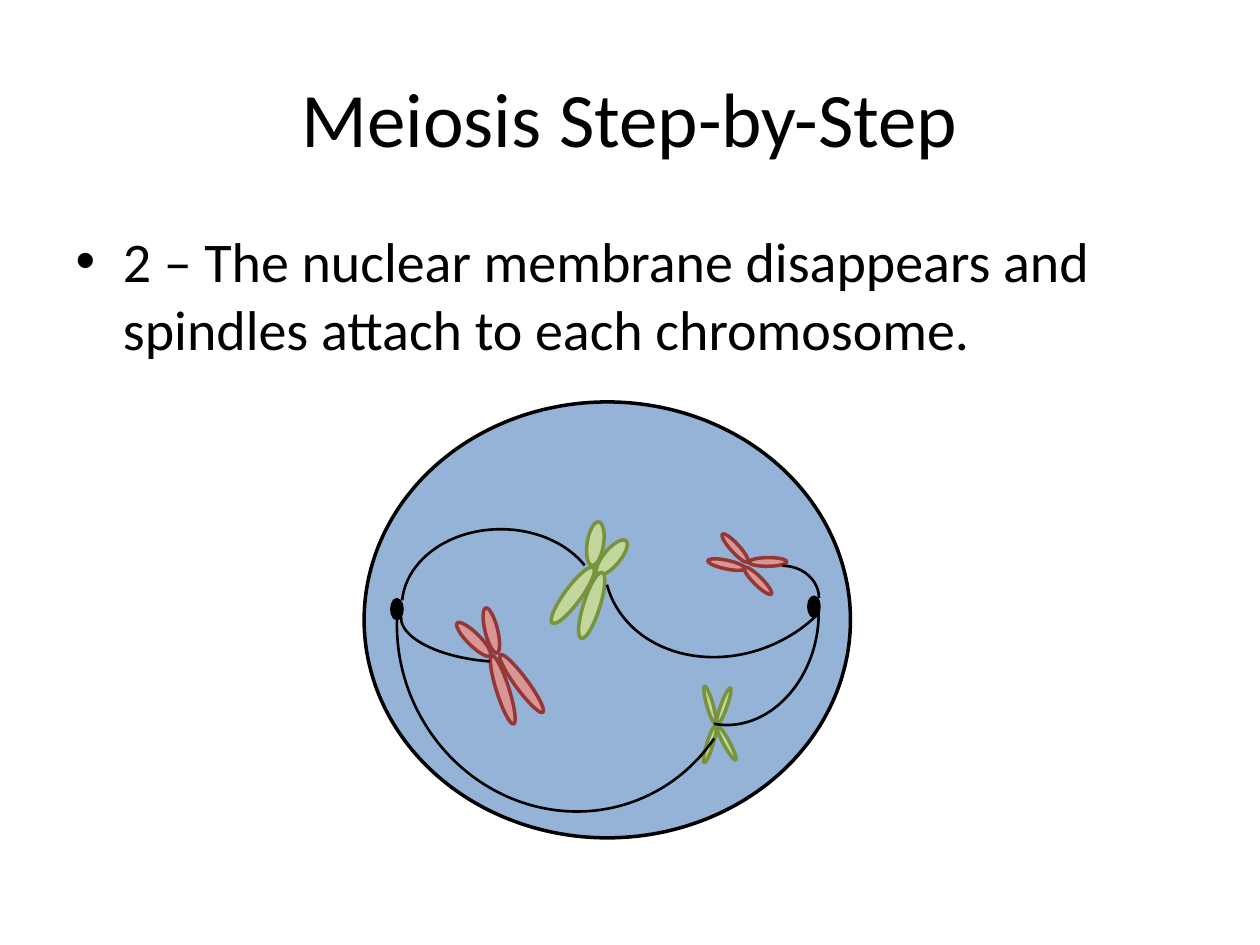
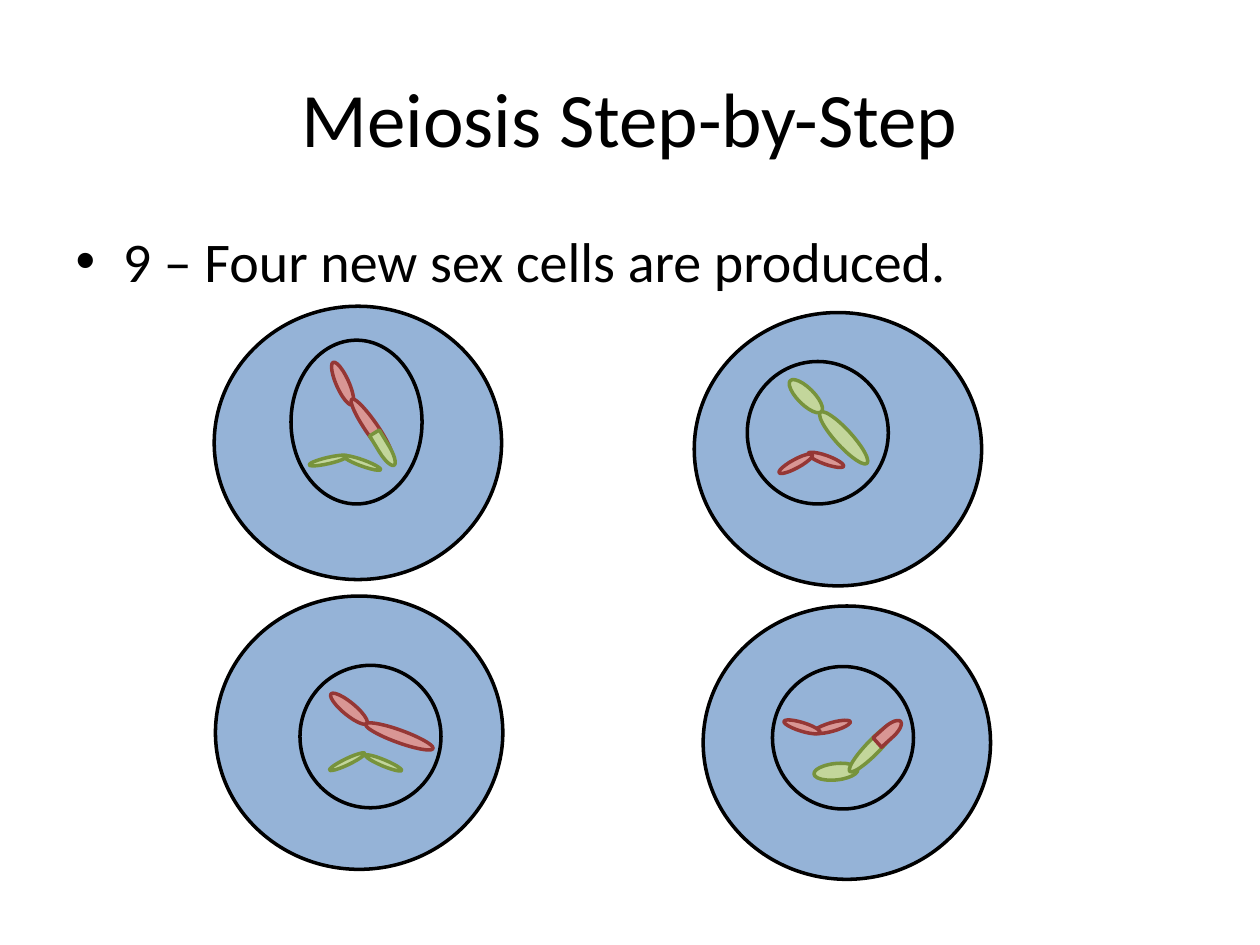
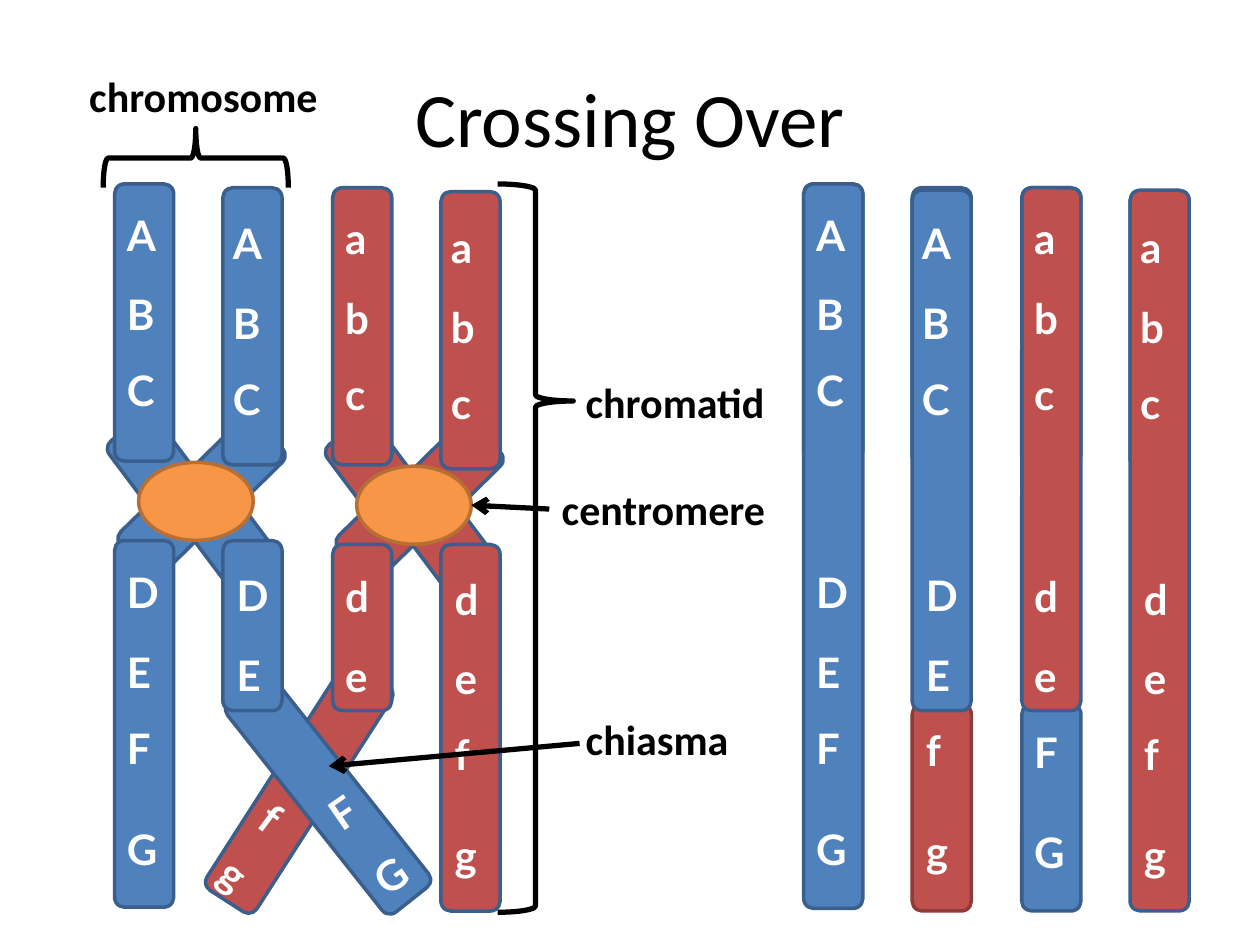
from lxml.etree import SubElement
from pptx import Presentation
from pptx.dml.color import RGBColor
from pptx.enum.shapes import MSO_CONNECTOR, MSO_SHAPE
from pptx.enum.text import MSO_ANCHOR, MSO_AUTO_SIZE, PP_ALIGN
from pptx.oxml.ns import qn
from pptx.util import Pt

# Shared style: (fill, line) for each part
BLACK, WHITE = "000000", "FFFFFF"
PAINT = {
    "cell": ("95B3D7", BLACK),
    "nucleus": (None, BLACK),
    "centriole": (BLACK, BLACK),
    "green": ("C3D69B", "77933C"),
    "red": ("D99694", "953735"),
    "blue strand": ("4F81BD", "3A5F8C"),
    "red strand": ("C0504D", "3A5F8C"),
    "red tip": ("C0504D", "8E3B39"),
    "centromere": ("F79646", "B76F34"),
    "outline": (None, BLACK),
}
TITLE_BOX, TITLE_FONT = (36, 21.6, 648, 90), {"name": "Calibri", "size": Pt(44)}
BODY_BOX, BODY_FONT = (36, 126, 648, 356.4), {"name": "Calibri", "size": Pt(32)}
LABEL_FONT = {"name": "Calibri", "size": Pt(24), "bold": True}
LETTER_FONT = {"name": "Lato", "size": Pt(24), "bold": True}

# Step 2: one cell; a chromosome is colour, arm width, arms (left, top, length, rotation)
STEP_TITLE = "Meiosis Step-by-Step"
SPINDLE_STEP = "2 – The nuclear membrane disappears and spindles attach to each chromosome."
SPINDLE_CELL = (208.1, 229.7, 277.9, 249.1)
SPINDLE_CHROMOSOMES = [
    ("green", 9.4, [(335.5, 298.1, 25.2, 8.8), (344.9, 306, 25.2, 40.2),
                    (333.4, 326.2, 39.6, 17.6), (322.6, 320.4, 39.6, 36.5)]),
    ("green", 3.6, [(403.9, 391.7, 22.3, 344.1), (411.8, 392.4, 22.3, 19.8),
                    (403.9, 414, 22.3, 17.1), (413.3, 413.3, 22.3, 331.6)]),
    ("red", 7.2, [(267.1, 352.1, 26.6, 314.7), (277.2, 347, 26.6, 346.1),
                  (294.5, 370.1, 41, 323.5), (283.7, 373.7, 41, 342.4)]),
    ("red", 5, [(412.6, 311.8, 21.6, 281.9), (417.6, 302.4, 21.6, 317.6),
                (430.6, 321.1, 21.6, 314.9), (436.3, 310.3, 21.6, 269.4)]),
]
CENTRIOLES = [(223.9, 342.7, 5.8, 10.8), (462.2, 341.3, 5.8, 10.8)]
# Spindle fibres: box, rotation, start and end angle in degrees
FIBRES = [
    ((229.7, 302.4, 113, 87.8), 0, (183.29, 334.19)),
    ((229, 334.1, 105.1, 43.9), 184.1, (270, 0)),
    ((426.2, 323.3, 41.8, 36.7), 0, (270, 0)),
    ((360, 307.4, 118.8, 95.8), 101.1, (251.29, 0)),
    ((343.4, 251.3, 146.2, 122.4), 157.9, (238.88, 4.87)),
    ((227.5, 257, 197.3, 207.4), 157.9, (238.88, 26.61)),
]

# Step 9: four cells, with the crossed-over tips drawn last
SEX_CELL_STEP = "9 – Four new sex cells are produced."
SEX_CELL_SIZE = (164.2, 156.2)
SEX_CELLS = [
    {"at": (122.4, 175), "nucleus": (166.3, 194.4, 74.9, 93.6), "chromosomes": [
        ("green", 3.6, [(185.8, 252, 22.3, 77), (205.2, 253.4, 22.3, 110)]),
        ("red", 7.2, [(192.2, 205.9, 26.6, 335.9), (208.8, 224.6, 40.3, 325.6)])]},
    {"at": (396.7, 178.6), "nucleus": (427, 206.6, 80.6, 81.4), "chromosomes": [
        ("red", 5, [(469.4, 252, 21.6, 109.8), (452.2, 254.2, 21.6, 61.6)]),
        ("green", 9.4, [(455.8, 213.8, 25.2, 314.9), (477.4, 230.4, 39.6, 317.6)])]},
    {"at": (123.1, 340.6), "nucleus": (171.4, 380.2, 80.6, 81.4), "chromosomes": [
        ("green", 3.6, [(217.4, 424.8, 22.3, 112.7), (196.6, 424.1, 22.3, 64.5)]),
        ("red", 7.2, [(195.8, 391.7, 26.6, 309.5), (224.6, 400.3, 41, 109.9)])]},
    {"at": (401.8, 346.3), "nucleus": (441.4, 380.9, 80.6, 81.4), "chromosomes": [
        ("red", 5, [(473, 404.6, 21.6, 74.1), (455.8, 404.6, 21.6, 107.1)]),
        ("green", 9.4, [(473, 428.4, 25.2, 264.1)]),
        ("green", 7.9, [(495.4, 406.8, 39.6, 224.1)])]},
]
CROSSED_TIPS = [("green", (208.8, 253.4, 21.6, 6.5), 58.7),
                ("red", (499, 414.7, 18, 7.2), 317.9)]

# Crossing over: places within the blue chromosome, which the red one repeats
CROSSING_TITLE = "Crossing Over"
STRAND = 33.8
RED_SHIFT, AFTER_SHIFT = (124.6, 2.2), 393.8
LINKS = [(71.3, 239.8, 323.1), (115.2, 283, 323.1), (118.1, 240.5, 45.4), (78.5, 275.8, 45.7)]
LINK_LENGTH, UPPER_LENGTH, LOWER_TOP = 51.8, 158.4, 308.9
UPPER_STRANDS = [(65.5, 105.1), (127.4, 107.3)]
CENTROMERE = (79.2, 264.2, 65.5, 44.6)
LETTER_PLACES = [(65.5, 115.9), (126, 121), (65.5, 320.4), (128.2, 321.8)]
LETTER_GAPS = (16.8, 14.4, 28.8)
LETTER_HEIGHTS = {2: 82.1, 3: 131, 4: 184.3}
CHROMOSOMES = [
    {"paint": "blue strand", "shift": (0, 0), "lower": (209.5, 97.2),
     "before": ("ABC", "ABC", "DEFG", "DE"), "after": ("ABC", "ABC", "DEFG", "DEfg"),
     "whole": [(105.1, 414), (108.7, 297.4)]},
    {"paint": "red strand", "shift": RED_SHIFT, "lower": (95, 209.5),
     "before": ("abc", "abc", "de", "defg"), "after": ("abc", "abc", "deFG", "defg"),
     "whole": [(107.3, 298.8), (108.7, 411.8)]},
]
CROSSED_STRANDS = [("red strand", (154.1, 373.7, STRAND, 153.4), 32.7),
                   ("blue strand", (170.6, 377.3, STRAND, 153.4), 321.6)]
SWAPPED_ENDS = [("blue strand", (583.9, 402.5, STRAND, 118.1), 0),
                ("red tip", (521.3, 402.5, STRAND, 118.1), 0)]
CROSSED_LETTERS = [("fg", (131, 448.6, STRAND, 74.9), 36.6, (9.6,)),
                   ("FG", (194.4, 439.9, STRAND, 82.1), 325.3, (16.8,))]
LABELS = [("centromere", (313.9, 272.9, 131.8, 36)), ("chiasma", (327.6, 403.9, 97.2, 36)),
          ("chromosome", (43.9, 36.7, 146.2, 36)), ("chromatid", (327.6, 211.7, 118.1, 36))]
BRACES = [((95, 37.4, 33.8, 105.8), 270, (0.083, 0.5)),
          ((284.4, 105.1, 43.2, 416.2), 0, (0.083, 0.298))]
ARROWS = [(313.9, 290.9, 269.3, 288.7), (331.2, 424.8, 187.9, 437.8)]


# Helpers
def colour(value):
    return RGBColor.from_string(value)


def points(values):
    return [Pt(value) for value in values]


def apply(target, values):
    for name, value in values.items():
        setattr(target, name, value)


def draw(shapes, kind, box, paint, rotation=0, weight=2, adjustments=()):
    fill, line = PAINT[paint]
    shape = shapes.add_shape(kind, *points(box))
    shape.shadow.inherit = False
    shape.rotation = rotation
    if fill:
        shape.fill.solid()
        shape.fill.fore_color.rgb = colour(fill)
    else:
        shape.fill.background()
    shape.line.color.rgb = colour(line)
    shape.line.width = Pt(weight)
    for index, value in enumerate(adjustments):
        shape.adjustments[index] = value


def fill_placeholder(holder, text, box, font):
    apply(holder, dict(zip(("left", "top", "width", "height"), points(box))))
    holder.text_frame.text = text
    paragraph = holder.text_frame.paragraphs[0]
    apply(paragraph.font, font)
    paragraph.font.color.rgb = colour(BLACK)
    return holder.text_frame


def add_page(deck, title, body=None):
    page = deck.slides.add_slide(deck.slide_layouts[1 if body else 5])
    frame = fill_placeholder(page.shapes.title, title, TITLE_BOX, TITLE_FONT)
    frame.vertical_anchor = MSO_ANCHOR.MIDDLE
    frame.paragraphs[0].alignment = PP_ALIGN.CENTER
    if body:
        fill_placeholder(page.placeholders[1], body, BODY_BOX, BODY_FONT)
    return page.shapes


def add_text(shapes, lines, box, font, ink, rotation=0, gaps=(), wrap=True):
    text_box = shapes.add_textbox(*points(box))
    text_box.rotation = rotation
    frame = text_box.text_frame
    apply(frame, {"word_wrap": wrap, "auto_size": MSO_AUTO_SIZE.SHAPE_TO_FIT_TEXT})
    for index, line in enumerate(lines):
        paragraph = frame.add_paragraph() if index else frame.paragraphs[0]
        if index:
            paragraph.space_before = Pt(gaps[index - 1])
        span = paragraph.add_run()
        span.text = line
        apply(span.font, font)
        span.font.color.rgb = colour(ink)


def add_arrow(shapes, ends):
    arrow = shapes.add_connector(MSO_CONNECTOR.STRAIGHT, *points(ends))
    arrow.line.color.rgb = colour(BLACK)
    arrow.line.width = Pt(3)
    properties = arrow.element.spPr
    SubElement(properties.find(qn("a:ln")), qn("a:tailEnd"), type="arrow")
    SubElement(properties, qn("a:effectLst"))


def draw_chromosome(shapes, paint, width, arms):
    group = shapes.add_group_shape()
    for left, top, length, rotation in arms:
        draw(group.shapes, MSO_SHAPE.OVAL, (left, top, width, length), paint, rotation)


def draw_strands(shapes, strands):
    for paint, box, rotation in strands:
        draw(shapes, MSO_SHAPE.ROUNDED_RECTANGLE, box, paint, rotation)


def draw_letters(shapes, texts, dx, dy):
    for letters, (left, top) in zip(texts, LETTER_PLACES):
        box = (left + dx, top + dy, STRAND, LETTER_HEIGHTS[len(letters)])
        add_text(shapes, letters, box, LETTER_FONT, WHITE, gaps=LETTER_GAPS)


# Slides
def build_spindles(deck):
    shapes = add_page(deck, STEP_TITLE, SPINDLE_STEP)
    draw(shapes, MSO_SHAPE.OVAL, SPINDLE_CELL, "cell")
    for chromosome in SPINDLE_CHROMOSOMES:
        draw_chromosome(shapes, *chromosome)
    for box in CENTRIOLES:
        draw(shapes, MSO_SHAPE.OVAL, box, "centriole")
    for box, rotation, angles in FIBRES:
        # An arc angle is kept in 60000ths of a degree, an adjustment in 100000ths
        turns = [angle * 0.6 for angle in angles]
        draw(shapes, MSO_SHAPE.ARC, box, "outline", rotation, 1.5, turns)


def build_sex_cells(deck):
    shapes = add_page(deck, STEP_TITLE, SEX_CELL_STEP)
    for cell in SEX_CELLS:
        draw(shapes, MSO_SHAPE.OVAL, cell["at"] + SEX_CELL_SIZE, "cell")
        for chromosome in cell["chromosomes"]:
            draw_chromosome(shapes, *chromosome)
        draw(shapes, MSO_SHAPE.OVAL, cell["nucleus"], "nucleus")
    for paint, box, rotation in CROSSED_TIPS:
        draw(shapes, MSO_SHAPE.FLOWCHART_DELAY, box, paint, rotation)


def build_crossing_over(deck):
    shapes = add_page(deck, CROSSING_TITLE)
    draw_strands(shapes, CROSSED_STRANDS + SWAPPED_ENDS)
    for chromosome in CHROMOSOMES:
        paint, (dx, dy) = chromosome["paint"], chromosome["shift"]
        uppers = [(x + dx, y + dy, STRAND, UPPER_LENGTH) for x, y in UPPER_STRANDS]

        # Joined chromatids before the exchange
        links = [(paint, (x + dx, y + dy, STRAND, LINK_LENGTH), turn) for x, y, turn in LINKS]
        lowers = [(paint, (box[0], LOWER_TOP + dy, STRAND, length), 0)
                  for box, length in zip(uppers, chromosome["lower"])]
        draw_strands(shapes, links + [(paint, box, 0) for box in uppers] + lowers)
        left, top, width, height = CENTROMERE
        draw(shapes, MSO_SHAPE.OVAL, (left + dx, top + dy, width, height), "centromere")
        draw_letters(shapes, chromosome["before"], dx, dy)

        # Separate chromatids after the exchange
        after = [(paint, (x + AFTER_SHIFT, y, w, h), 0) for x, y, w, h in uppers]
        whole = [(paint, (box[0] + AFTER_SHIFT, top, STRAND, length), 0)
                 for box, (top, length) in zip(uppers, chromosome["whole"])]
        draw_strands(shapes, after + whole)
        draw_letters(shapes, chromosome["after"], dx + AFTER_SHIFT, dy)

    # Letters on the crossed ends, then labels with braces and arrows
    for letters, box, rotation, gaps in CROSSED_LETTERS:
        add_text(shapes, letters, box, LETTER_FONT, WHITE, rotation, gaps)
    for label, box in LABELS:
        add_text(shapes, [label], box, LABEL_FONT, BLACK, wrap=False)
    for box, rotation, adjustments in BRACES:
        draw(shapes, MSO_SHAPE.RIGHT_BRACE, box, "outline", rotation, 3, adjustments)
    for ends in ARROWS:
        add_arrow(shapes, ends)


def main():
    deck = Presentation()
    deck.slide_width, deck.slide_height = Pt(720), Pt(540)
    build_spindles(deck)
    build_sex_cells(deck)
    build_crossing_over(deck)
    deck.save("out.pptx")


if __name__ == "__main__":
    main()
